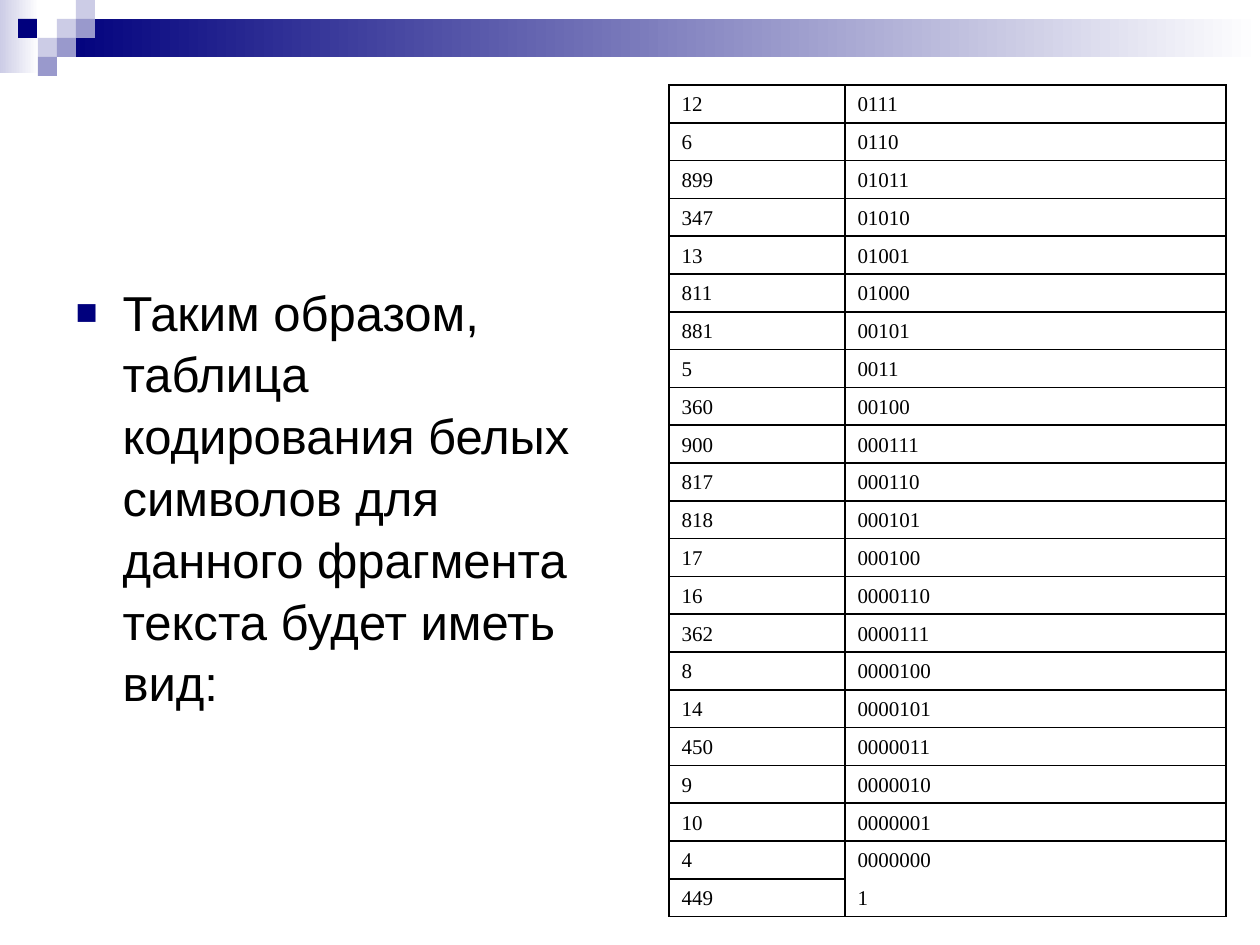
from lxml.etree import SubElement
from pptx import Presentation
from pptx.dml.color import RGBColor
from pptx.enum.shapes import MSO_SHAPE
from pptx.enum.text import MSO_ANCHOR, MSO_AUTO_SIZE
from pptx.oxml.ns import qn
from pptx.util import Emu, Pt

NAVY = RGBColor(0x00, 0x00, 0x7D)
LAVENDER = RGBColor(0xCC, 0xCC, 0xE6)
VIOLET = RGBColor(0x99, 0x99, 0xCC)
WHITE = RGBColor(0xFF, 0xFF, 0xFF)
BLACK = RGBColor(0x00, 0x00, 0x00)

STATEMENT = ("Таким образом, таблица кодирования белых символов "
             "для данного фрагмента текста будет иметь вид:")
CODES = [
    ("12", "0111"), ("6", "0110"), ("899", "01011"), ("347", "01010"),
    ("13", "01001"), ("811", "01000"), ("881", "00101"), ("5", "0011"),
    ("360", "00100"), ("900", "000111"), ("817", "000110"),
    ("818", "000101"), ("17", "000100"), ("16", "0000110"),
    ("362", "0000111"), ("8", "0000100"), ("14", "0000101"),
    ("450", "0000011"), ("9", "0000010"), ("10", "0000001"),
    ("4", "0000000"), ("449", "1"),
]
GRADIENT_BANDS = [((0, 0, 39, 73), LAVENDER), ((57, 19, 1203, 38), NAVY)]
SQUARE = 19
SQUARES = [
    (57, 19, LAVENDER), (76, 0, LAVENDER), (76, 19, VIOLET),
    (38, 38, LAVENDER), (18, 19, NAVY), (57, 38, VIOLET), (38, 57, VIOLET),
]
BODY = (63, 273, 557, 536)
TABLE = (669, 85, 557, 832)
COLUMN_WIDTHS = (176, 381)
INDENT = 47


def px(length):
    return Emu(round(length * 914400 / 126))


def add_rectangle(page, area, color):
    shape = page.shapes.add_shape(MSO_SHAPE.RECTANGLE, *map(px, area))
    shape.shadow.inherit = False
    shape.line.fill.background()
    shape.fill.solid()
    shape.fill.fore_color.rgb = color
    return shape


def fade_to_white(shape, color):
    shape.fill.gradient()
    shape.fill.gradient_angle = 0
    for stop, stop_color, position in zip(shape.fill.gradient_stops, (color, WHITE), (0, 1)):
        stop.color.rgb = stop_color
        stop.position = position


def style_paragraph(para, font, size):
    """Set the hanging indent and the font of all runs."""
    properties = para._p.get_or_add_pPr()
    properties.set("marL", str(px(INDENT)))
    properties.set("indent", str(-px(INDENT)))
    for span in para.runs:
        span.font.name = font
        span.font.size = Pt(size)
        span.font.color.rgb = BLACK


def add_square_bullet(para):
    properties = para._p.get_or_add_pPr()
    color = SubElement(properties, qn("a:buClr"))
    SubElement(color, qn("a:srgbClr"), val=str(NAVY))
    SubElement(properties, qn("a:buSzPct"), val="75000")
    SubElement(properties, qn("a:buFont"), typeface="Arial")
    SubElement(properties, qn("a:buChar"), char="■")


def set_borders(cell, hidden):
    """Draw the four cell borders, except the sides named in hidden."""
    properties = cell._tc.get_or_add_tcPr()
    for side in "LRTB":
        line = SubElement(properties, qn(f"a:ln{side}"), w=str(Pt(1)))
        if side in hidden:
            SubElement(line, qn("a:noFill"))
        else:
            fill = SubElement(line, qn("a:solidFill"))
            SubElement(fill, qn("a:srgbClr"), val=str(BLACK))


def add_statement(page):
    body = page.placeholders[1]
    body.left, body.top, body.width, body.height = map(px, BODY)
    frame = body.text_frame
    frame.text = STATEMENT
    frame.word_wrap = True
    frame.auto_size = MSO_AUTO_SIZE.NONE
    frame.vertical_anchor = MSO_ANCHOR.TOP
    para = frame.paragraphs[0]
    para.line_spacing = 1.05
    style_paragraph(para, "Arial", 28)
    add_square_bullet(para)


def add_code_table(page):
    table = page.shapes.add_table(len(CODES), 2, *map(px, TABLE)).table
    table.first_row = table.horz_banding = False
    for column, width in zip(table.columns, COLUMN_WIDTHS):
        column.width = px(width)
    # The last two codes share one open cell area.
    open_sides = {(len(CODES) - 2, 1): "B", (len(CODES) - 1, 1): "T"}
    for row, values in enumerate(CODES):
        table.rows[row].height = px(TABLE[3] / len(CODES))
        for column, value in enumerate(values):
            cell = table.cell(row, column)
            cell.text = value
            cell.vertical_anchor = MSO_ANCHOR.BOTTOM
            style_paragraph(cell.text_frame.paragraphs[0], "Times New Roman", 12)
            set_borders(cell, open_sides.get((row, column), ""))
            cell.fill.background()


def main():
    deck = Presentation()
    deck.slide_width, deck.slide_height = px(1260), px(945)
    page = deck.slides.add_slide(deck.slide_layouts[1])
    title = page.shapes.title._element
    title.getparent().remove(title)
    for area, color in GRADIENT_BANDS:
        fade_to_white(add_rectangle(page, area, color), color)
    for left, top, color in SQUARES:
        add_rectangle(page, (left, top, SQUARE, SQUARE), color)
    add_statement(page)
    add_code_table(page)
    deck.save("out.pptx")


if __name__ == "__main__":
    main()
